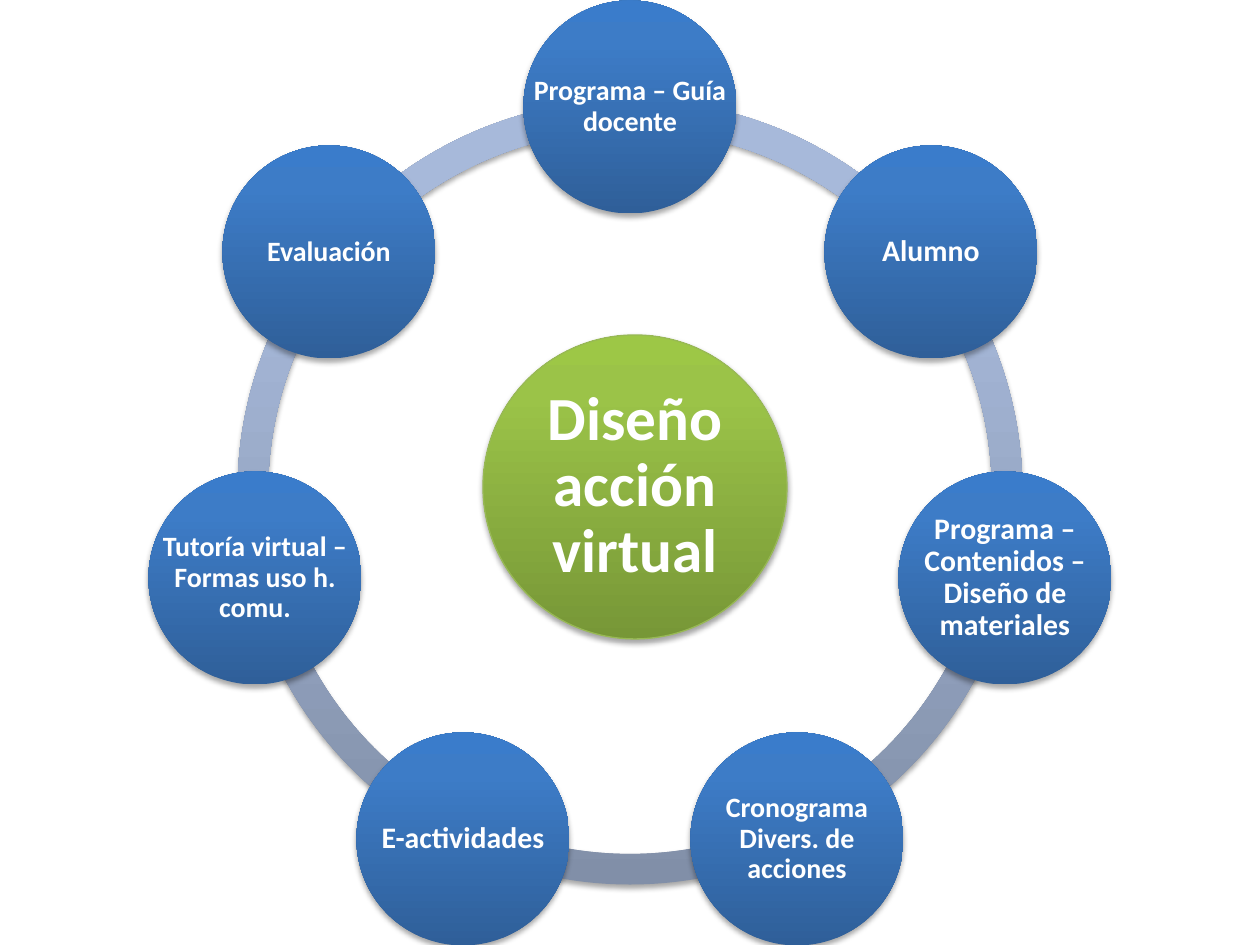
import copy
import math
from dataclasses import dataclass

import pptx
import pptx.dml.color
import pptx.enum.shapes
import pptx.enum.text
import pptx.oxml
import pptx.oxml.ns
import pptx.util

EMU_PER_PX = 914400 / 126
FONT = "Calibri"
COLORS = {
    "text": "FFFFFF",
    "shadow": "000000",
    "hub_line": "98B955",
}
# Gradient colours from bottom to top
GRADIENTS = {
    "ring": ("818FA8", "A7B9DA", "A7BADC"),
    "hub": ("779737", "9BC348", "9DC746"),
    "node": ("2F5F99", "3D7CC7", "3A7CCB"),
}
STOPS = (0, 0.8, 1)

CENTER_X, CENTER_Y = 630, 492
ORBIT = 385
RING_SIZE = 785
RING_THICKNESS = 0.039
NODE_SIZE = 213


@dataclass
class Circle:
    text: str
    font_size: int
    x: int
    y: int
    size: int
    inset: int
    gradient: str
    line: str = ""


NODES = [
    ("Programa – Guía docente", 16),
    ("Alumno", 17),
    ("Programa – Contenidos – Diseño de materiales", 17),
    ("Cronograma Divers. de acciones", 16),
    ("E-actividades", 17),
    ("Tutoría virtual – Formas uso h. comu.", 16),
    ("Evaluación", 16),
]
STEP = 360 / len(NODES)


def px(value: int) -> pptx.util.Emu:
    return pptx.util.Emu(round(value * EMU_PER_PX))


def rgb(value: str) -> pptx.dml.color.RGBColor:
    return pptx.dml.color.RGBColor.from_string(value)


def square(x: int, y: int, size: int) -> tuple:
    """Left, top, width and height of a square around a centre."""
    return px(x - size / 2), px(y - size / 2), px(size), px(size)


def set_gradient(shape, name: str) -> None:
    shape.fill.gradient()
    shape.fill.gradient_angle = 90
    stop_list = shape.element.xpath(".//a:gsLst")[0]
    stop_list.insert(1, copy.deepcopy(stop_list[0]))
    for stop, position, color in zip(shape.fill.gradient_stops, STOPS, GRADIENTS[name]):
        stop.position = position
        stop.color.rgb = rgb(color)


def set_shadow(shape) -> None:
    shape.shadow.inherit = False
    effects = shape.element.xpath("./p:spPr/a:effectLst")[0]
    effects.append(pptx.oxml.parse_xml(
        f'<a:outerShdw {pptx.oxml.ns.nsdecls("a")} blurRad="40000" dist="23000" '
        f'dir="5400000" rotWithShape="0"><a:srgbClr val="{COLORS["shadow"]}">'
        '<a:alpha val="35000"/></a:srgbClr></a:outerShdw>'
    ))


def add_solid(page, kind, bounds: tuple, gradient: str, line: str = ""):
    shape = page.shapes.add_shape(kind, *bounds)
    set_gradient(shape, gradient)
    if line:
        shape.line.color.rgb = rgb(line)
        shape.line.width = pptx.util.Pt(0.75)
    else:
        shape.line.fill.background()
    set_shadow(shape)
    return shape


def add_arc(page, start: float) -> None:
    arc = add_solid(page, pptx.enum.shapes.MSO_SHAPE.BLOCK_ARC,
                    square(CENTER_X, CENTER_Y, RING_SIZE), "ring")
    # Angles are stored in 1/60000 degree, adjustments in 1/100000
    arc.adjustments[0] = start % 360 * 0.6
    arc.adjustments[1] = (start + STEP) % 360 * 0.6
    arc.adjustments[2] = RING_THICKNESS


def add_circle(page, circle: Circle) -> None:
    bounds = square(circle.x, circle.y, circle.size)
    add_solid(page, pptx.enum.shapes.MSO_SHAPE.OVAL, bounds, circle.gradient, circle.line)

    # The label spans the full width of the circle
    frame = page.shapes.add_textbox(*bounds).text_frame
    frame.word_wrap = True
    frame.vertical_anchor = pptx.enum.text.MSO_ANCHOR.MIDDLE
    frame.margin_left = frame.margin_right = px(circle.inset)
    frame.margin_top = frame.margin_bottom = px(circle.inset)
    para = frame.paragraphs[0]
    para.text = circle.text
    para.alignment = pptx.enum.text.PP_ALIGN.CENTER
    para.line_spacing = 0.9
    para.font.name = FONT
    para.font.size = pptx.util.Pt(circle.font_size)
    para.font.bold = True
    para.font.color.rgb = rgb(COLORS["text"])


def main() -> None:
    deck = pptx.Presentation()
    deck.slide_width, deck.slide_height = px(1260), px(945)
    page = deck.slides.add_slide(deck.slide_layouts[6])

    # Ring, one arc between each pair of neighbours
    for index in reversed(range(len(NODES))):
        add_arc(page, 270 + index * STEP)

    # Hub
    add_circle(page, Circle("Diseño acción virtual", 35, 635, 487, 304, 6,
                            "hub", COLORS["hub_line"]))

    # Nodes, clockwise from the top
    for index, (text, font_size) in enumerate(NODES):
        angle = math.radians(index * STEP)
        x = round(CENTER_X + ORBIT * math.sin(angle))
        y = round(CENTER_Y - ORBIT * math.cos(angle))
        add_circle(page, Circle(text, font_size, x, y, NODE_SIZE, 3, "node"))

    deck.save("out.pptx")


if __name__ == "__main__":
    main()
